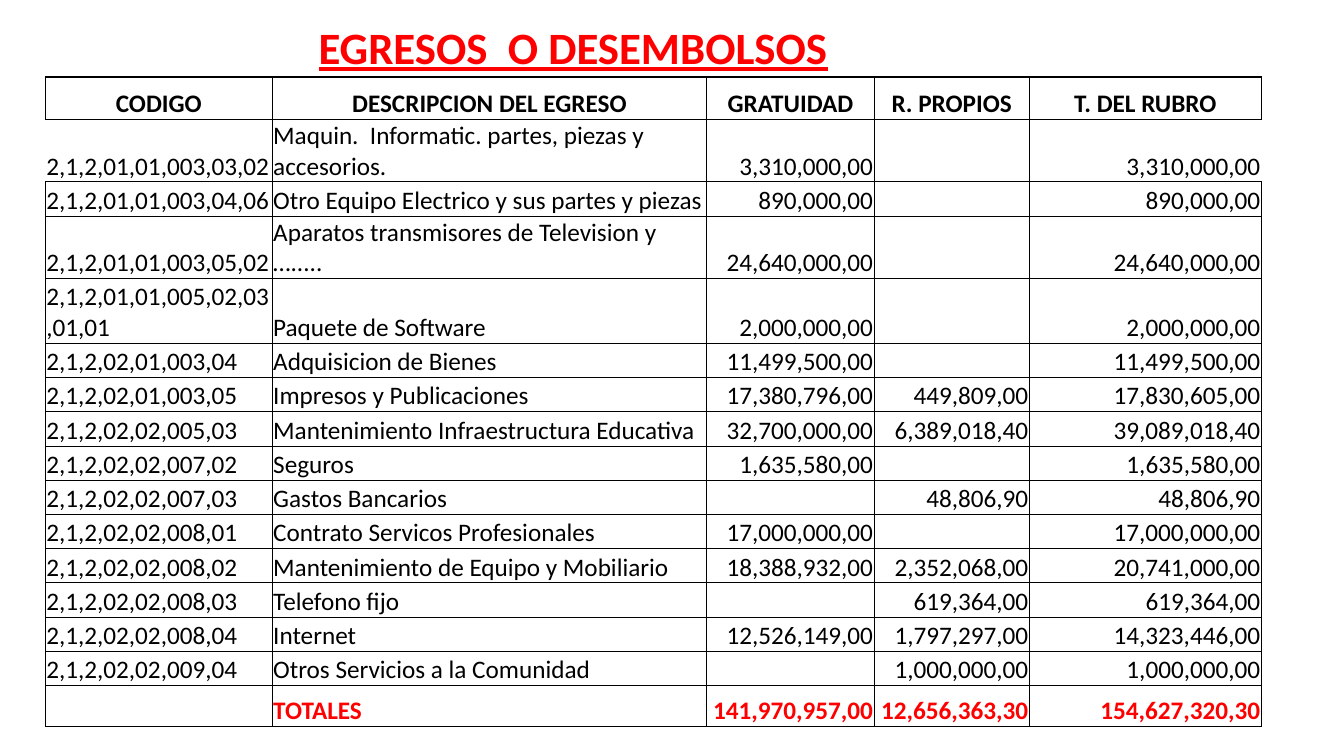
from lxml.etree import SubElement
from pptx import Presentation
from pptx.dml.color import RGBColor
from pptx.enum.text import MSO_ANCHOR as Anchor, PP_ALIGN as Align
from pptx.oxml.ns import qn
from pptx.util import Inches, Pt

BLACK = RGBColor(0, 0, 0)
RED = RGBColor(255, 0, 0)
NO_STYLE = "{2D5ABB26-0587-4C30-8999-92F81FD0307C}"

COLUMN_WIDTHS = [2.25, 4.31, 1.66, 1.54, 2.3]
ROW_HEIGHTS = [0.47, 0.42, 0.4, 0.34, 0.34, 0.64] + [0.34] * 10 + [0.4]
LINES = [
    ("", "EGRESOS  O DESEMBOLSOS", "", "", ""),
    ("CODIGO", "DESCRIPCION DEL EGRESO", "GRATUIDAD", "R. PROPIOS", "T. DEL RUBRO"),
    ("2,1,2,01,01,003,03,02", "Maquin.  Informatic. partes, piezas y accesorios.", "3,310,000,00", "", "3,310,000,00"),
    ("2,1,2,01,01,003,04,06", "Otro Equipo Electrico y sus partes y piezas", "890,000,00", "", "890,000,00"),
    ("2,1,2,01,01,003,05,02", "Aparatos transmisores de Television y ….....", "24,640,000,00", "", "24,640,000,00"),
    ("2,1,2,01,01,005,02,03,01,01", "Paquete de Software", "2,000,000,00", "", "2,000,000,00"),
    ("2,1,2,02,01,003,04", "Adquisicion de Bienes", "11,499,500,00", "", "11,499,500,00"),
    ("2,1,2,02,01,003,05", "Impresos y Publicaciones", "17,380,796,00", "449,809,00", "17,830,605,00"),
    ("2,1,2,02,02,005,03", "Mantenimiento Infraestructura Educativa", "32,700,000,00", "6,389,018,40", "39,089,018,40"),
    ("2,1,2,02,02,007,02", "Seguros", "1,635,580,00", "", "1,635,580,00"),
    ("2,1,2,02,02,007,03", "Gastos Bancarios", "", "48,806,90", "48,806,90"),
    ("2,1,2,02,02,008,01", "Contrato Servicos Profesionales", "17,000,000,00", "", "17,000,000,00"),
    ("2,1,2,02,02,008,02", "Mantenimiento de Equipo y Mobiliario", "18,388,932,00", "2,352,068,00", "20,741,000,00"),
    ("2,1,2,02,02,008,03", "Telefono fijo", "", "619,364,00", "619,364,00"),
    ("2,1,2,02,02,008,04", "Internet", "12,526,149,00", "1,797,297,00", "14,323,446,00"),
    ("2,1,2,02,02,009,04", "Otros Servicios a la Comunidad", "", "1,000,000,00", "1,000,000,00"),
    ("", "TOTALES", "141,970,957,00", "12,656,363,30", "154,627,320,30"),
]
TITLE, HEADER, FIRST_EXPENSE, TOTALS = 0, 1, 2, len(LINES) - 1
LAST_COLUMN = len(COLUMN_WIDTHS) - 1


def border_widths(r, c):
    if r == TITLE:
        return {"L": 0, "R": 0, "T": 0, "B": 1}
    widths = {"L": 0.5, "R": 0.5, "T": 0.5, "B": 0.5}
    if r == HEADER:
        widths.update(T=1, B=1)
    if r == FIRST_EXPENSE:
        widths["T"] = 1
    outer = {HEADER: 1, FIRST_EXPENSE: 0}.get(r, 0.5)
    if c == 0:
        widths["L"] = outer
    if c == LAST_COLUMN:
        widths["R"] = outer
    return widths


def draw_borders(cell, widths):
    properties = cell._tc.get_or_add_tcPr()
    for side, width in widths.items():
        line = SubElement(properties, qn(f"a:ln{side}"), w=str(Pt(width)))
        if width:
            fill = SubElement(line, qn("a:solidFill"))
            SubElement(fill, qn("a:srgbClr"), val=str(BLACK))
        else:
            SubElement(line, qn("a:noFill"))


prs = Presentation()
prs.slide_width, prs.slide_height = Inches(13.33), Inches(7.5)
slide = prs.slides.add_slide(prs.slide_layouts[6])

expenses = slide.shapes.add_table(
    len(LINES), len(COLUMN_WIDTHS), Inches(0.45), Inches(0.21),
    Inches(sum(COLUMN_WIDTHS)), Inches(sum(ROW_HEIGHTS))).table
expenses.first_row = expenses.horz_banding = False
expenses._tbl.tblPr.find(qn("a:tableStyleId")).text = NO_STYLE
for column, width in zip(expenses.columns, COLUMN_WIDTHS):
    column.width = Inches(width)
for row, height in zip(expenses.rows, ROW_HEIGHTS):
    row.height = Inches(height)

for r, line in enumerate(LINES):
    for c, text in enumerate(line):
        cell = expenses.cell(r, c)
        cell.margin_left = cell.margin_right = cell.margin_top = Inches(0.01)
        cell.margin_bottom = 0
        cell.vertical_anchor = Anchor.BOTTOM
        draw_borders(cell, border_widths(r, c))
        cell.fill.background()
        if not text:
            continue
        paragraph = cell.text_frame.paragraphs[0]
        if r <= HEADER:
            paragraph.alignment = Align.CENTER
        else:
            paragraph.alignment = Align.RIGHT if c >= 2 else Align.LEFT
        run = paragraph.add_run()
        run.text = text
        run.font.name = "Calibri"
        run.font.size = Pt(32 if r == TITLE else 18)
        run.font.bold = r in (TITLE, HEADER, TOTALS)
        run.font.underline = r == TITLE
        run.font.color.rgb = RED if r in (TITLE, TOTALS) else BLACK

expenses.cell(TITLE, 1).merge(expenses.cell(TITLE, 2))

prs.save("out.pptx")
